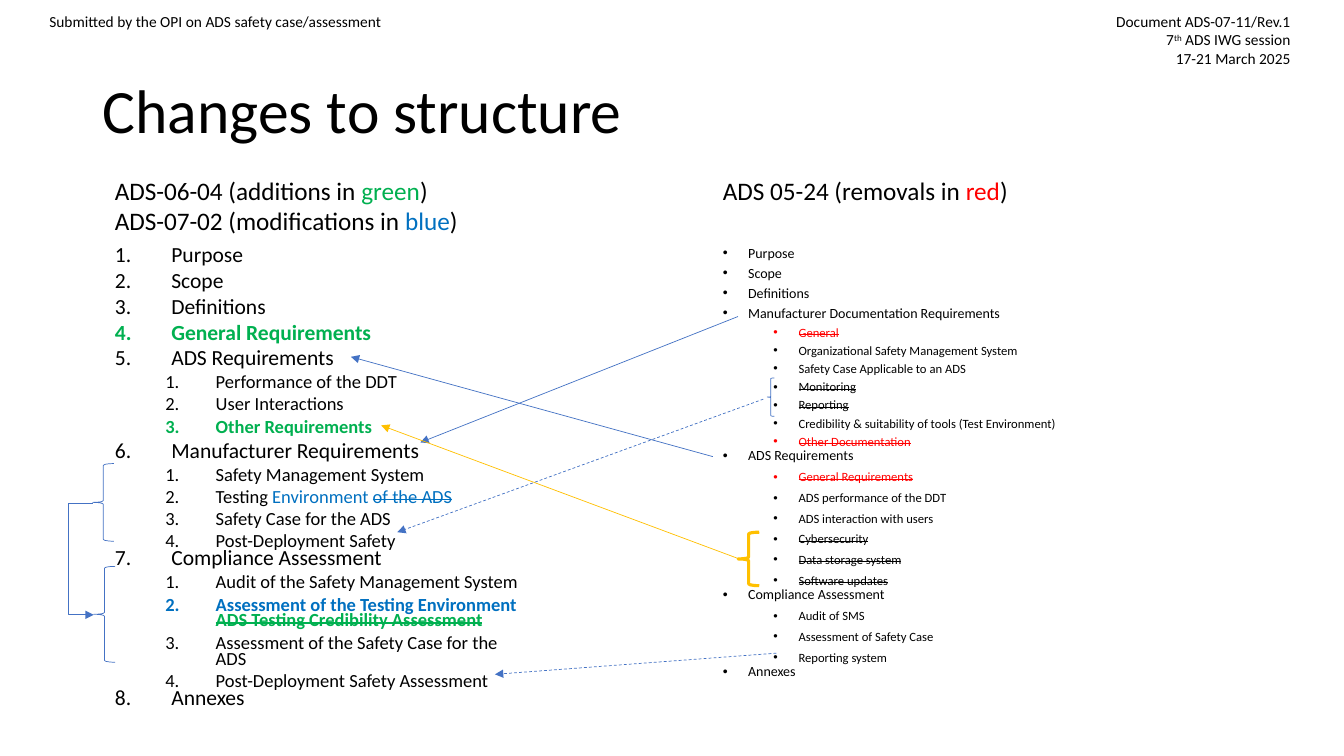
from dataclasses import dataclass

from lxml import etree
from pptx import Presentation
from pptx.dml.color import RGBColor
from pptx.enum.dml import MSO_LINE
from pptx.enum.shapes import MSO_CONNECTOR, MSO_SHAPE
from pptx.enum.text import MSO_ANCHOR, MSO_AUTO_SIZE, PP_ALIGN
from pptx.oxml.ns import qn
from pptx.util import Inches, Pt

STRAIGHT, ELBOW = MSO_CONNECTOR.STRAIGHT, MSO_CONNECTOR.ELBOW
LEFT_BRACE = MSO_SHAPE.LEFT_BRACE
DASH = MSO_LINE.DASH
LEFT, RIGHT = PP_ALIGN.LEFT, PP_ALIGN.RIGHT
MIDDLE, TOP = MSO_ANCHOR.MIDDLE, MSO_ANCHOR.TOP
NO_FIT = MSO_AUTO_SIZE.NONE
WIDTH, HEIGHT = Inches(13.33), Inches(7.5)


@dataclass(frozen=True)
class Theme:
    font: str = "Calibri"
    black: str = "000000"
    green: str = "00B050"
    blue: str = "0070C0"
    red: str = "FF0000"
    link: str = "4472C4"
    amber: str = "FFC000"
    title: float = 44
    heading: float = 18
    note: float = 11
    new_list: tuple = (15.4, 13.2)
    old_list: tuple = (10, 9)
    thin: float = 0.5
    thick: float = 2.25


THEME = Theme()

# Run styles: colour, bold, struck through, superscript
PLAIN = (THEME.black, False, False, False)
RAISED = (THEME.black, False, False, True)
GREEN = (THEME.green, False, False, False)
BLUE = (THEME.blue, False, False, False)
RED = (THEME.red, False, False, False)
ADDED = (THEME.green, True, False, False)
MODIFIED = (THEME.blue, True, False, False)
DROPPED = (THEME.green, True, True, False)
BLUE_STRUCK = (THEME.blue, False, True, False)
REMOVED = (THEME.red, False, True, False)
MOVED = (THEME.black, False, True, False)

# Columns and rows, in percent of the slide's width and height
NEW_COL, OLD_COL = 7.8, 53.04
HEADING_ROW, LIST_ROW = 22.53, 31.2
HEADING_W, LIST_W, LIST_H = 28.06, 32.26, 63.47
BRACE_W = 1.58

# Sections: line spacing, points before a sub-item, items as (level, runs)
NEW_STRUCTURE = [
    (1.0, 0, [
        (0, [("Purpose", PLAIN)]),
        (0, [("Scope", PLAIN)]),
        (0, [("Definitions", PLAIN)]),
        (0, [("General Requirements", ADDED)]),
        (0, [("ADS Requirements", PLAIN)]),
        (1, [("Performance of the DDT", PLAIN)]),
        (1, [("User Interactions", PLAIN)]),
        (1, [("Other Requirements", ADDED)]),
        (0, [("Manufacturer Requirements", PLAIN)]),
        (1, [("Safety Management System", PLAIN)]),
        (1, [("Testing ", PLAIN), ("Environment ", BLUE), ("of the ADS", BLUE_STRUCK)]),
        (1, [("Safety Case for the ADS", PLAIN)]),
        (1, [("Post-Deployment Safety", PLAIN)]),
    ]),
    (0.7, 5, [
        (0, [("Compliance Assessment", PLAIN)]),
        (1, [("Audit of the Safety Management System", PLAIN)]),
        (1, [("Assessment of the Testing Environment ", MODIFIED),
             ("ADS Testing Credibility Assessment", DROPPED)]),
        (1, [("Assessment of the Safety Case for the ADS", PLAIN)]),
        (1, [("Post-Deployment Safety Assessment", PLAIN)]),
        (0, [("Annexes", PLAIN)]),
    ]),
]
OLD_STRUCTURE = [
    (1.2, 0, [
        (0, [("Purpose", PLAIN)]),
        (0, [("Scope", PLAIN)]),
        (0, [("Definitions", PLAIN)]),
        (0, [("Manufacturer Documentation Requirements", PLAIN)]),
        (1, [("General", REMOVED)]),
        (1, [("Organizational Safety Management System", PLAIN)]),
        (1, [("Safety Case Applicable to an ADS", PLAIN)]),
        (1, [("Monitoring", MOVED)]),
        (1, [("Reporting", MOVED)]),
        (1, [("Credibility & suitability of tools (Test Environment)", PLAIN)]),
        (1, [("Other Documentation", REMOVED)]),
    ]),
    (0.9, 5, [
        (0, [("ADS Requirements", PLAIN)]),
        (1, [("General Requirements", REMOVED)]),
        (1, [("ADS performance of the DDT", PLAIN)]),
        (1, [("ADS interaction with users", PLAIN)]),
        (1, [("Cybersecurity", MOVED)]),
        (1, [("Data storage system", MOVED)]),
        (1, [("Software updates", MOVED)]),
        (0, [("Compliance Assessment", PLAIN)]),
        (1, [("Audit of SMS", PLAIN)]),
        (1, [("Assessment of Safety Case", PLAIN)]),
        (1, [("Reporting system", PLAIN)]),
        (0, [("Annexes", PLAIN)]),
    ]),
]


def across(share):
    return round(WIDTH * share / 100)


def down(share):
    return round(HEIGHT * share / 100)


def area(left, top, width, height):
    return across(left), down(top), across(width), down(height)


def add_runs(paragraph, runs, size):
    for wording, (colour, bold, struck, raised) in runs:
        run = paragraph.add_run()
        run.text = wording
        run.font.name, run.font.size, run.font.bold = THEME.font, Pt(size), bold
        run.font.color.rgb = RGBColor.from_string(colour)
        properties = run._r.get_or_add_rPr()
        if struck:
            properties.set("strike", "sngStrike")
        if raised:
            properties.set("baseline", "30000")


def next_paragraph(frame, index):
    return frame.add_paragraph() if index else frame.paragraphs[0]


def add_label(slide, place, lines, size, align=LEFT, wrap=True):
    frame = slide.shapes.add_textbox(*area(*place)).text_frame
    frame.word_wrap = wrap
    for index, runs in enumerate(lines):
        paragraph = next_paragraph(frame, index)
        paragraph.alignment = align
        add_runs(paragraph, runs, size)


def place_holder(holder, place, anchor):
    holder.left, holder.top, holder.width, holder.height = area(*place)
    frame = holder.text_frame
    frame.auto_size, frame.vertical_anchor, frame.word_wrap = NO_FIT, anchor, True
    return frame


def fill_list(holder, column, sections, sizes, indents, numbered):
    frame = place_holder(holder, (column, LIST_ROW, LIST_W, LIST_H), TOP)
    rows = [(spacing, gap, *item) for spacing, gap, items in sections for item in items]
    for index, (spacing, gap, level, runs) in enumerate(rows):
        paragraph = next_paragraph(frame, index)
        paragraph.level, paragraph.line_spacing = level, spacing
        paragraph.space_before, paragraph.space_after = Pt(gap * level), Pt(0)
        margin, hang = indents[level]
        properties = paragraph._p.get_or_add_pPr()
        properties.set("marL", str(Inches(margin)))
        properties.set("indent", str(-Inches(hang)))
        if numbered:
            etree.SubElement(properties, qn("a:buFont"), typeface="+mj-lt")
            etree.SubElement(properties, qn("a:buAutoNum"), type="arabicPeriod")
        else:
            etree.SubElement(properties, qn("a:buFont"), typeface="Arial")
            etree.SubElement(properties, qn("a:buChar"), char="•")
        add_runs(paragraph, runs, sizes[level])


def add_brace(slide, place, colour=THEME.link, weight=THEME.thin):
    brace = slide.shapes.add_shape(LEFT_BRACE, *area(*place))
    brace.shadow.inherit = False
    brace.fill.background()
    brace.line.color.rgb = RGBColor.from_string(colour)
    brace.line.width = Pt(weight)


def add_arrow(slide, start, end, colour=THEME.link, dashed=False, kind=STRAIGHT):
    arrow = slide.shapes.add_connector(
        kind, across(start[0]), down(start[1]), across(end[0]), down(end[1]))
    arrow.line.color.rgb = RGBColor.from_string(colour)
    arrow.line.width = Pt(THEME.thin)
    if dashed:
        arrow.line.dash_style = DASH
    etree.SubElement(arrow.line._get_or_add_ln(), qn("a:tailEnd"), type="triangle")
    etree.SubElement(arrow._element.spPr, qn("a:effectLst"))
    return arrow


def bend(arrow, share):
    guides = arrow._element.spPr.find(qn("a:prstGeom")).get_or_add_avLst()
    etree.SubElement(guides, qn("a:gd"), name="adj1", fmla=f"val {share * 100000}")


def main():
    deck = Presentation()
    deck.slide_width, deck.slide_height = WIDTH, HEIGHT
    slide = deck.slides.add_slide(deck.slide_layouts[3])
    title, new_list, old_list = slide.placeholders

    # Document header
    add_label(slide, (82.07, 0.93, 14.7, 8.8), [
        [("Document ADS-07-11/Rev.1", PLAIN)],
        [("7", PLAIN), ("th", RAISED), (" ADS IWG session", PLAIN)],
        [("17-21 March 2025", PLAIN)]], THEME.note, RIGHT, wrap=False)
    add_label(slide, (2.93, 0.93, 26.41, 3.87), [
        [("Submitted by the OPI on ADS safety case/assessment", PLAIN)]],
        THEME.note, wrap=False)

    # Title and the two structures
    heading = place_holder(title, (6.9, 5.33, 86.27, 19.33), MIDDLE).paragraphs[0]
    heading.alignment, heading.line_spacing = LEFT, 0.9
    add_runs(heading, [("Changes to structure", PLAIN)], THEME.title)
    fill_list(new_list, NEW_COL, NEW_STRUCTURE, THEME.new_list,
              ((0.56, 0.56), (1, 0.5)), numbered=True)
    fill_list(old_list, OLD_COL, OLD_STRUCTURE, THEME.old_list,
              ((0.25, 0.25), (0.75, 0.25)), numbered=False)
    add_label(slide, (NEW_COL, HEADING_ROW, HEADING_W, 9.47), [
        [("ADS-06-04 (additions in ", PLAIN), ("green", GREEN), (")", PLAIN)],
        [("ADS-07-02 (modifications in ", PLAIN), ("blue", BLUE), (")", PLAIN)]],
        THEME.heading)
    add_label(slide, (OLD_COL, HEADING_ROW, HEADING_W, 5.33), [
        [("ADS 05-24 (removals in ", PLAIN), ("red", RED), (")", PLAIN)]], THEME.heading)

    # Sections that moved
    add_arrow(slide, (54.91, 41.87), (31.28, 58.53))
    add_arrow(slide, (OLD_COL, 60.4), (26.11, 47.2))
    add_brace(slide, (54.91, 70.4, BRACE_W, 7.07), THEME.amber, THEME.thick)
    add_arrow(slide, (54.91, 73.87), (28.36, 56.27), THEME.amber)

    # Requirements tied to their assessment
    add_brace(slide, (6.9, 61.33, BRACE_W, 10.27))
    add_brace(slide, (6.98, 74.93, BRACE_W, 12.67))
    bend(add_arrow(slide, (6.9, 66.53), (6.98, 81.33), kind=ELBOW), -23)

    # Monitoring and reporting
    add_arrow(slide, (56.79, 52.8), (29.56, 70.4), dashed=True)
    add_arrow(slide, (57.76, 86.4), (36.83, 89.2), dashed=True)
    add_brace(slide, (57.09, 50, 0.53, 5.07))

    deck.save("out.pptx")


if __name__ == "__main__":
    main()
